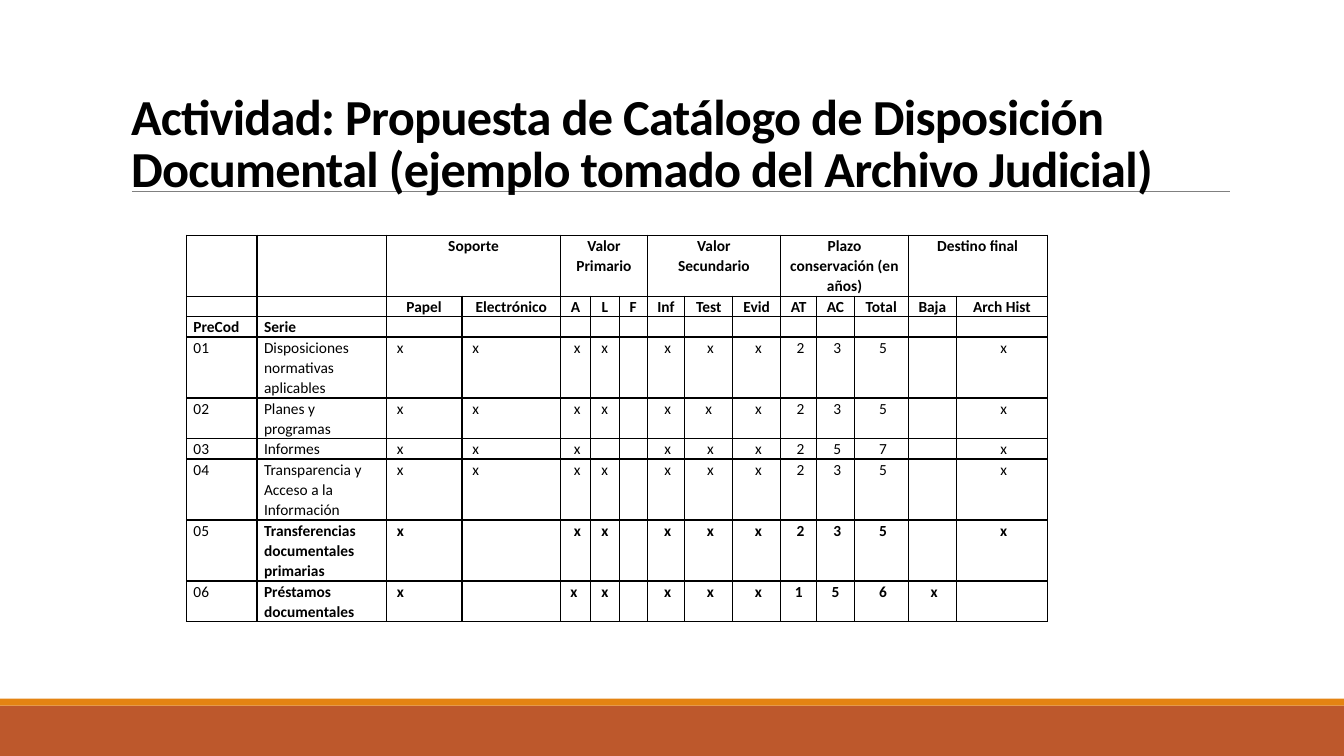
from dataclasses import dataclass
from lxml.etree import SubElement
from pptx import Presentation
from pptx.dml.color import RGBColor as RGB
from pptx.enum.shapes import MSO_CONNECTOR as LINK, MSO_SHAPE as SHAPE
from pptx.enum.text import MSO_ANCHOR as ANCHOR, MSO_AUTO_SIZE as AUTO, PP_ALIGN as ALIGN
from pptx.oxml import parse_xml
from pptx.oxml.ns import nsdecls, qn
from pptx.util import Pt


@dataclass(frozen=True)
class Theme:
    font: str = "Calibri"
    ink: str = "000000"
    rule: str = "808080"
    band: str = "BD582C"
    strip: str = "E48312"
    head: int = 36
    cell: int = 11


def put(item, **vals):
    for key, val in vals.items():
        setattr(item, key, val)


class Page:
    def __init__(self, deck, theme):
        self.theme = theme
        self.slide = deck.slides.add_slide(deck.slide_layouts[5])
        self.shapes = self.slide.shapes

    def text(self, para, words, size, bold):
        run = para.add_run()
        run.text = words
        put(run.font, name=self.theme.font, size=Pt(size), bold=bold)
        run.font.color.rgb = RGB.from_string(self.theme.ink)
        return run

    def bar(self, box, color):
        bar = self.shapes.add_shape(SHAPE.RECTANGLE, *map(Pt, box))
        bar.shadow.inherit = False
        bar.fill.solid()
        bar.fill.fore_color.rgb = RGB.from_string(color)
        bar.line.fill.background()

    def line(self, ends, color, width):
        line = self.shapes.add_connector(LINK.STRAIGHT, *map(Pt, ends))
        line.line.width = Pt(width)
        line.line.color.rgb = RGB.from_string(color)
        SubElement(line._element.spPr, qn("a:effectLst"))

    def title(self, words, box):
        title = self.shapes.title
        put(title, **dict(zip(("left", "top", "width", "height"), map(Pt, box))))
        put(title.text_frame, word_wrap=True, auto_size=AUTO.NONE,
            vertical_anchor=ANCHOR.BOTTOM)
        para = title.text_frame.paragraphs[0]
        put(para, alignment=ALIGN.LEFT, line_spacing=0.85)
        run = self.text(para, words, self.theme.head, True)
        run._r.get_or_add_rPr().set("spc", "-50")
        # Bring the title in front of the bars and the rule
        self.shapes._spTree.append(title._element)

    def edge(self, cell):
        props = cell._tc.get_or_add_tcPr()
        for spot, side in enumerate("LRTB"):
            props.insert(spot, parse_xml(
                f'<a:ln{side} {nsdecls("a")} w="12700"><a:solidFill>'
                f'<a:srgbClr val="{self.theme.ink}"/></a:solidFill></a:ln{side}>'))

    def fill(self, cell, words, bold, align):
        put(cell, margin_left=Pt(5), margin_right=Pt(5), margin_top=0, margin_bottom=0)
        cell.fill.background()
        self.edge(cell)
        frame = cell.text_frame
        for num, part in enumerate(words.split("/")):
            para = frame.add_paragraph() if num else frame.paragraphs[0]
            put(para, alignment=align, line_spacing=1.07)
            if part:
                self.text(para, part, self.theme.cell, bold)
            else:
                SubElement(para._p, qn("a:endParaRPr"), sz=str(self.theme.cell * 100))

    def table(self, rows, spot, cols, highs, spans, look):
        size = sum(cols), sum(highs)
        grid = self.shapes.add_table(len(rows), len(cols), *map(Pt, (*spot, *size))).table
        put(grid, first_row=False, horz_banding=False)
        for col, wide in zip(grid.columns, cols):
            col.width = Pt(wide)
        for row, high in zip(grid.rows, highs):
            row.height = Pt(high)
        for r, row in enumerate(rows):
            for c, words in enumerate(row):
                self.fill(grid.cell(r, c), words, *look(r, c))
        for first, last in spans:
            grid.cell(0, first).merge(grid.cell(0, last))


# Table content: "|" parts the cells, "/" the paragraphs, "_" is a hard space
ROWS = """
||Soporte||Valor/Primario|||Valor/Secundario|||Plazo conservación (en años)|||Destino final|
||Papel|Electrónico|A|L|F|Inf|Test|Evid|AT|AC|Total|Baja|Arch Hist
PreCod|Serie|||||||||||||
01|Disposiciones normativas aplicables|_x|_x|_x|x||_x|_x|_x|_2|_3|_5||_x
02|Planes y programas|_x|_x|_x|x||_x|x|_x|_2|_3|_5||_x
03|Informes|_x|_x|_x|||_x|_x|_x|_2|_5|_7||_x
04|Transparencia y Acceso a la Información|_x|_x|_x|x||_x|_x|_x|_2|_3|_5||_x
05|Transferencias documentales primarias|_x||_x|x||_x|_x|_x|_2|_3|_5||_x
06|Préstamos documentales|_x||x_|x||_x|_x|_x|1|5|_6|_x|
"""
COLS = [50.4, 92.4, 54, 70.6, 21.2, 20.6, 20, 26.8, 34.3, 34.3, 25.7, 26.8, 38.6, 34.6, 64.7]
LINES = [3, 1, 1, 3, 2, 1, 3, 3, 2]
SPANS = [(2, 3), (4, 6), (7, 9), (10, 12), (13, 14)]


def look(r, c):
    bold = r < 3 or (r > 6 and c > 0)
    left = c < 2 or (r > 2 and c < 4)
    return bold, ALIGN.LEFT if left else ALIGN.CENTER


def main():
    deck = Presentation()
    put(deck, slide_width=Pt(960), slide_height=Pt(540))
    theme = Theme()
    page = Page(deck, theme)

    # Footer bars and title rule
    page.bar((0, 504, 960, 36), theme.band)
    page.bar((0, 499, 960, 5), theme.strip)
    page.line((94.3, 136.8, 878.4, 136.8), theme.rule, 0.5)

    # Title
    page.title("Actividad: Propuesta de Catálogo de Disposición Documental "
               "(ejemplo tomado del Archivo Judicial)", (86.4, 30.2, 792, 114.5))

    # Catalogue table
    rows = [row.replace("_", "\N{NO-BREAK SPACE}").split("|")
            for row in ROWS.strip().splitlines()]
    page.table(rows, (133.2, 168), COLS, [14.2 * n for n in LINES], SPANS, look)

    deck.save("out.pptx")


if __name__ == "__main__":
    main()
